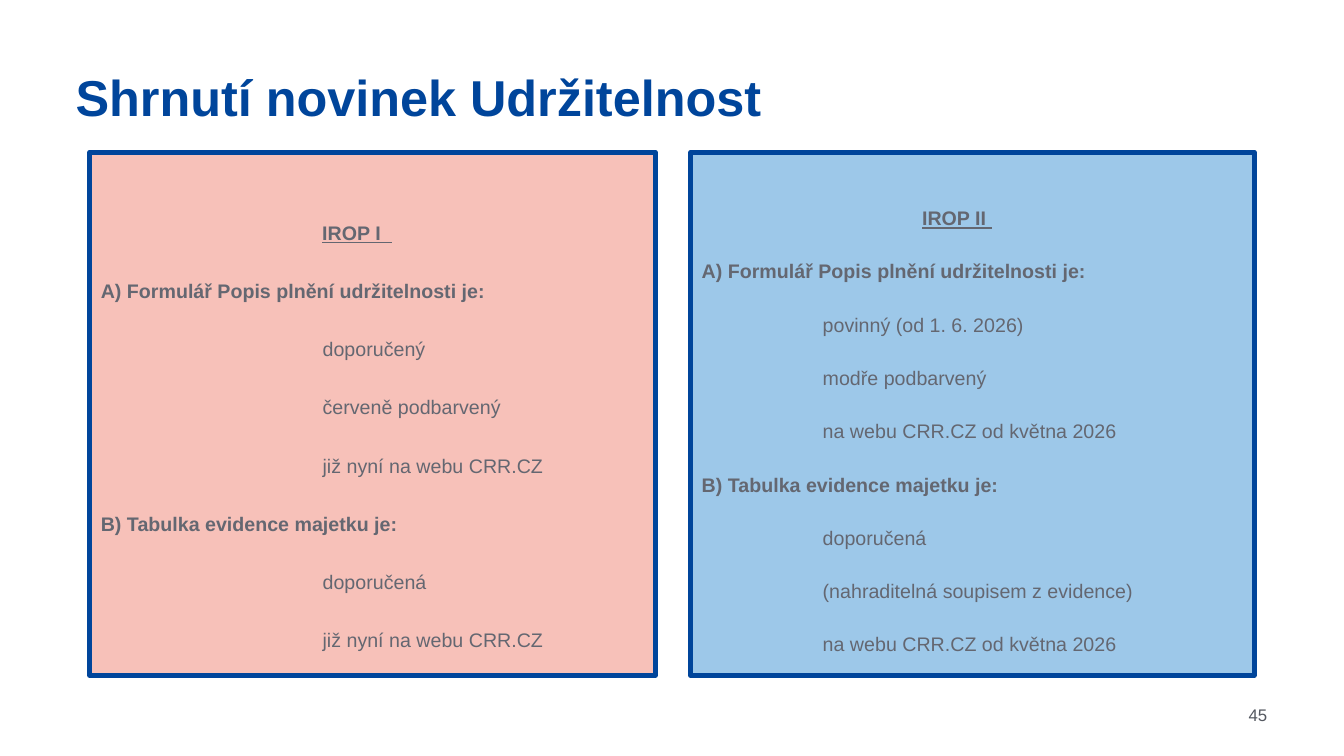
import pptx
import pptx.util
import pptx.dml.color
import pptx.enum.shapes
import pptx.enum.text

Inches = pptx.util.Inches
Pt = pptx.util.Pt
ALIGN = pptx.enum.text.PP_ALIGN
ANCHOR = pptx.enum.text.MSO_ANCHOR

COLORS = {
    "navy": "00459B",
    "gray": "646771",
    "number": "545860",
    "red": "F7C1B9",
    "blue": "9DC8E9",
}

IROP_1 = [
    ("A) Formulář Popis plnění udržitelnosti je:",
     ["doporučený", "červeně podbarvený", "již nyní na webu CRR.CZ"]),
    ("B) Tabulka evidence majetku je:",
     ["doporučená", "již nyní na webu CRR.CZ"]),
]
IROP_2 = [
    ("A) Formulář Popis plnění udržitelnosti je:",
     ["povinný (od 1. 6. 2026)", "modře podbarvený", "na webu CRR.CZ od května 2026"]),
    ("B) Tabulka evidence majetku je:",
     ["doporučená", "(nahraditelná soupisem z evidence)", "na webu CRR.CZ od května 2026"]),
]


def rgb(name):
    return pptx.dml.color.RGBColor.from_string(COLORS[name])


def write(paragraph, text, size=14, color="gray", bold=False, underline=False,
          align=ALIGN.LEFT, line_spacing=1.0, indent=0):
    paragraph.alignment = align
    paragraph.line_spacing = line_spacing
    if indent:
        properties = paragraph._p.get_or_add_pPr()
        properties.set("marL", str(Inches(indent)))
        properties.set("indent", "0")
    run = paragraph.add_run()
    run.text = text
    run.font.name = "Arial"
    run.font.size = Pt(size)
    run.font.bold = bold
    run.font.underline = underline
    run.font.color.rgb = rgb(color)


def set_frame(frame, anchor, top=0):
    frame.word_wrap = True
    frame.auto_size = pptx.enum.text.MSO_AUTO_SIZE.NONE
    frame.vertical_anchor = anchor
    frame.margin_left = frame.margin_right = frame.margin_bottom = 0
    frame.margin_top = Inches(top)


def add_title(slide, text):
    title = slide.shapes.title
    title.left, title.top = Inches(0.75), Inches(0.68)
    title.width, title.height = Inches(10.83), Inches(0.66)
    set_frame(title.text_frame, ANCHOR.TOP, top=0.04)
    write(title.text_frame.paragraphs[0], text, size=36, color="navy",
          bold=True, line_spacing=0.9)


def add_panel(slide, left, width, fill, heading, sections, top, line_spacing, gap):
    shape = slide.shapes.add_shape(
        pptx.enum.shapes.MSO_SHAPE.RECTANGLE,
        Inches(left), Inches(1.51), Inches(width), Inches(5.19))
    shape.shadow.inherit = False
    shape.fill.solid()
    shape.fill.fore_color.rgb = rgb(fill)
    shape.line.color.rgb = rgb("navy")
    shape.line.width = Pt(3.5)
    frame = shape.text_frame
    set_frame(frame, ANCHOR.TOP, top)
    heading_paragraph = frame.paragraphs[0]
    for text, underline in ((heading, True), ("\t", False)):
        write(heading_paragraph, text, bold=True, underline=underline,
              align=ALIGN.CENTER, line_spacing=line_spacing)
    item_indent = 2.31 if fill == "red" else 1.31
    for section, items in sections:
        lines = [(section, True, 0.11)] + [(item, False, item_indent) for item in items]
        for text, bold, indent in lines:
            paragraph = frame.add_paragraph()
            paragraph.space_before = Pt(gap)
            write(paragraph, text, bold=bold, indent=indent, line_spacing=line_spacing)
    for paragraph in frame.paragraphs:
        paragraph.space_after = Pt(gap)


def add_page_number(slide, text):
    box = slide.shapes.add_textbox(Inches(9.57), Inches(6.89), Inches(3), Inches(0.4))
    set_frame(box.text_frame, ANCHOR.MIDDLE)
    write(box.text_frame.paragraphs[0], text, size=12, color="number", align=ALIGN.RIGHT)


def main():
    presentation = pptx.Presentation()
    presentation.slide_width = Inches(13.33)
    presentation.slide_height = Inches(7.5)
    slide = presentation.slides.add_slide(presentation.slide_layouts[5])
    add_title(slide, "Shrnutí novinek Udržitelnost")
    add_panel(slide, 0.89, 5.61, "red", "IROP I  ", IROP_1,
              top=0.68, line_spacing=1.0, gap=12.4)
    add_panel(slide, 6.85, 5.59, "blue", "IROP II ", IROP_2,
              top=0.58, line_spacing=0.8, gap=12.3)
    add_page_number(slide, "45")
    presentation.save("out.pptx")


if __name__ == "__main__":
    main()
